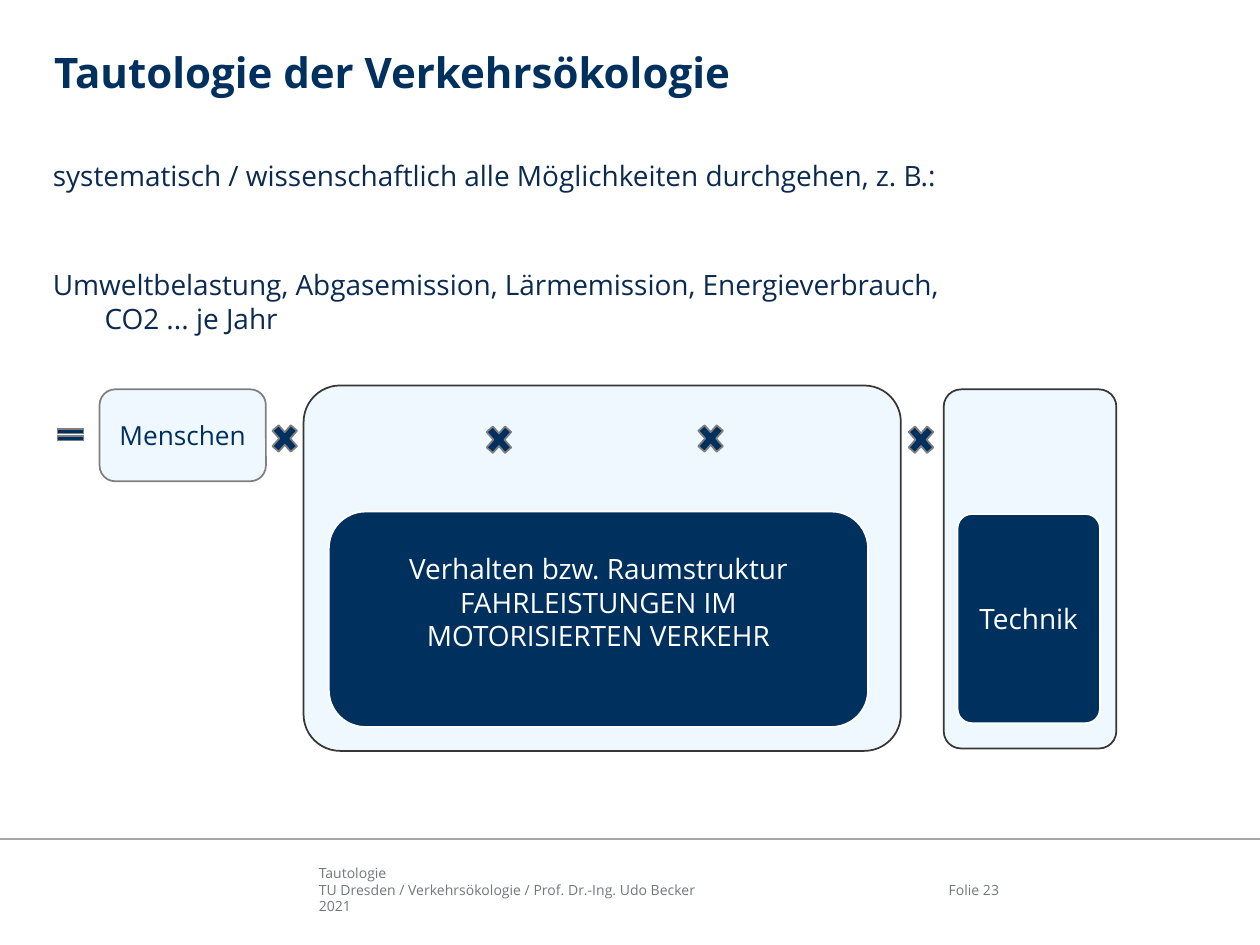
from pptx import Presentation
from pptx.dml.color import RGBColor
from pptx.enum.shapes import MSO_CONNECTOR, MSO_SHAPE
from pptx.enum.text import MSO_ANCHOR, PP_ALIGN
from pptx.oxml.ns import qn
from pptx.util import Inches, Pt
from lxml.etree import SubElement

# Content
FONT, NAVY, PALE, WHITE = "Open Sans", "00305E", "F0F8FF", "FFFFFF"
DARK, GREY, FOOT = "363636", "7F7F7F", "727879"
TITLE = "Tautologie der Verkehrsökologie"
BODY = [
    "systematisch / wissenschaftlich alle Möglichkeiten durchgehen, z. B.:",
    "Umweltbelastung, Abgasemission, Lärmemission, Energieverbrauch,\vCO2 ... je Jahr",
]
FOOTER = "Tautologie\nTU Dresden / Verkehrsökologie / Prof. Dr.-Ing. Udo Becker\n2021"
BEHAVIOUR = "Verhalten bzw. Raumstruktur\nFAHRLEISTUNGEN IM\nMOTORISIERTEN VERKEHR"

# left, top, width, height, corner, fill, line, text, size, text colour
BOXES = [
    (2.41, 3.06, 4.74, 2.9, 0.1, PALE, DARK, "", 16, NAVY),
    (7.49, 3.09, 1.37, 2.85, 0.1, PALE, DARK, "", 16, NAVY),
    (7.6, 4.08, 1.13, 1.66, 0.1, NAVY, WHITE, "Technik", 16, WHITE),
    (2.61, 4.06, 4.28, 1.71, 0.17, NAVY, WHITE, BEHAVIOUR, 16, WHITE),
    (0.79, 3.09, 1.32, 0.73, 0.17, PALE, GREY, "Menschen", 15, NAVY),
]
TIMES = [(2.12, 3.32), (3.82, 3.33), (5.5, 3.32), (7.17, 3.33)]


def rgb(color):
    return RGBColor.from_string(color)


def write(shape, text, size, color, align=PP_ALIGN.LEFT, bold=False,
          anchor=MSO_ANCHOR.TOP, insets=(0, 0, 0, 0)):
    tf = shape.text_frame
    tf.word_wrap = True
    tf.vertical_anchor = anchor
    tf.margin_left, tf.margin_top, tf.margin_right, tf.margin_bottom = map(Inches, insets)
    tf.text = text
    for p in tf.paragraphs:
        p.alignment = align
        font = p.font
        font.name, font.size, font.bold = FONT, Pt(size), bold
        font.color.rgb = rgb(color)
        for r in p.runs:
            r.font.name, r.font.size, r.font.bold = FONT, Pt(size), bold
            r.font.color.rgb = rgb(color)
    return tf


def add_text(s, at, *args, **kwargs):
    return write(s.shapes.add_textbox(*map(Inches, at)), *args, **kwargs)


def add_shape(s, kind, at, fill, line):
    sp = s.shapes.add_shape(kind, *map(Inches, at))
    sp.shadow.inherit = False
    sp.fill.solid()
    sp.fill.fore_color.rgb = rgb(fill)
    sp.line.color.rgb = rgb(line)
    sp.line.width = Pt(1)
    return sp


prs = Presentation()
prs.slide_width, prs.slide_height = Inches(10), Inches(7.5)
s = prs.slides.add_slide(prs.slide_layouts[6])

# Footer
add_text(s, (2.53, 6.86, 4.52, 0.4), FOOTER, 8, FOOT)
add_text(s, (7.17, 6.86, 0.76, 0.4), "Folie 23", 8, FOOT,
         align=PP_ALIGN.RIGHT, anchor=MSO_ANCHOR.MIDDLE)
rule = s.shapes.add_connector(MSO_CONNECTOR.STRAIGHT, 0, Inches(6.66),
                              prs.slide_width, Inches(6.66))
rule.line.color.rgb = rgb("A6A6A6")
rule.line.width = Pt(1)
SubElement(rule._element.spPr, qn("a:effectLst"))

# Title and body with hanging indent
add_text(s, (0.43, 0.37, 9.15, 0.47), TITLE, 24, NAVY, bold=True)
body = add_text(s, (0.42, 1.26, 9.16, 1.5), "\n".join(BODY), 16, "0B2A51")
for p in body.paragraphs:
    pPr = p._p.get_or_add_pPr()
    pPr.set("marL", str(Inches(0.41)))
    pPr.set("indent", str(-Inches(0.41)))
body.paragraphs[1].space_before = Pt(43)

# Factor boxes
for *at, corner, fill, line, text, size, color in BOXES:
    sp = add_shape(s, MSO_SHAPE.ROUNDED_RECTANGLE, at, fill, line)
    sp.adjustments[0] = corner
    if text:
        bottom = 0.32 if text == BEHAVIOUR else 0.05
        write(sp, text, size, color, align=PP_ALIGN.CENTER,
              anchor=MSO_ANCHOR.MIDDLE, insets=(0.1, 0.05, 0.1, bottom))

# Operators
for x, y in TIMES:
    add_shape(s, MSO_SHAPE.MATH_MULTIPLY, (x, y, 0.28, 0.32), NAVY, GREY)
add_shape(s, MSO_SHAPE.MATH_EQUAL, (0.42, 3.37, 0.28, 0.16), NAVY, GREY)

prs.save("out.pptx")
